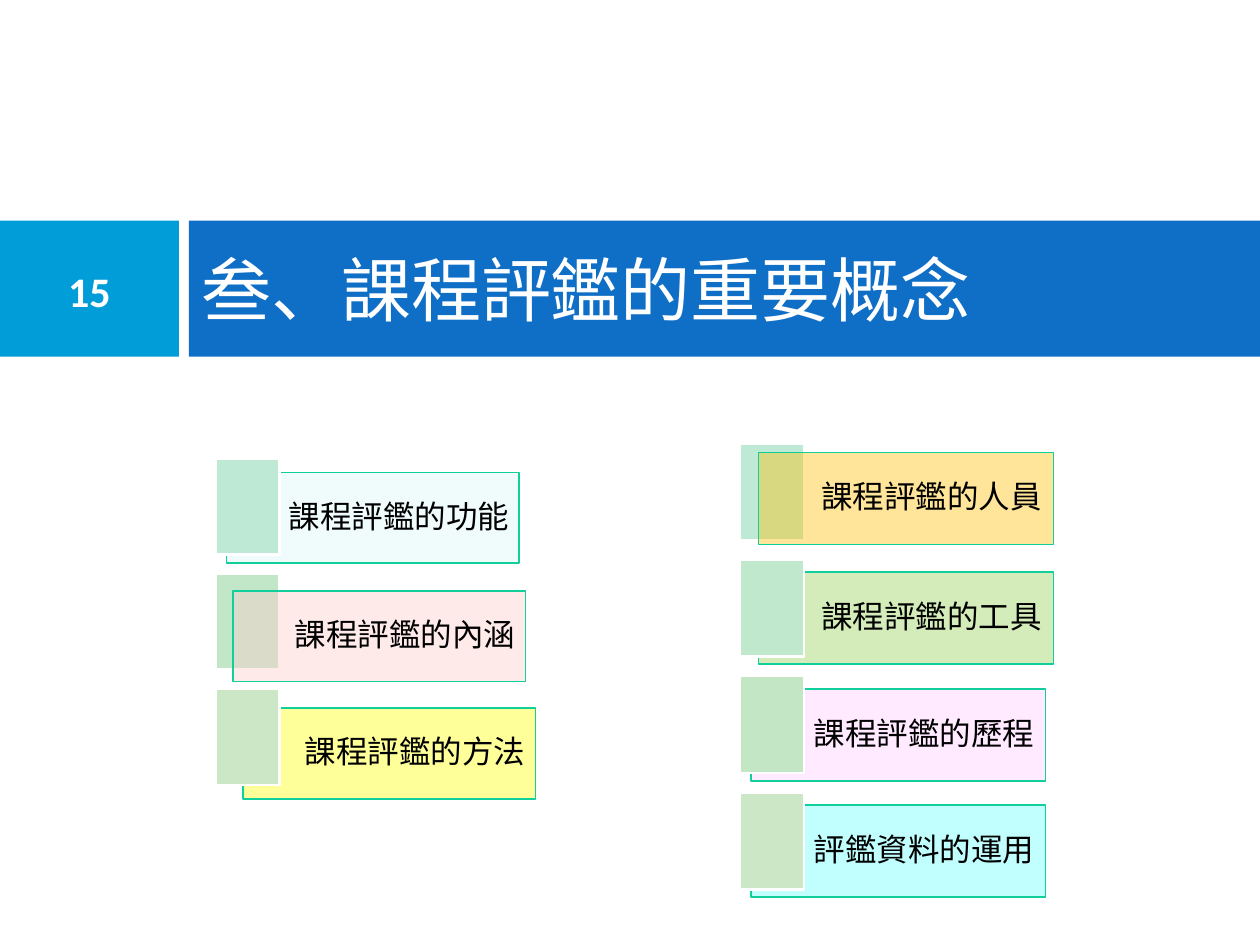
"""Build a section slide with a title band and two staggered lists of topics."""
from lxml import etree
from pptx import Presentation
from pptx import util as u
from pptx.dml.color import RGBColor
from pptx.enum import shapes, text
from pptx.oxml.ns import qn

THEME = {
    "font": "Calibri", "white": "FFFFFF", "ink": "000000",
    "number_band": "009DD9", "title_band": "0F6FC6", "card_line": "10CF9B",
    "title_size": 40, "number_size": 24, "card_size": 18,
    "card_line_width": 0.79, "tab_line_width": 1.5, "card_opacity": 40,
}

presentation = Presentation()
presentation.slide_width, presentation.slide_height = u.Inches(10), u.Inches(7.5)
slide = presentation.slides.add_slide(presentation.slide_layouts[6])
COLUMN = presentation.slide_width / 100
ROW = presentation.slide_height / 75


def add_box(left, top, width, height, fill, line=None, line_width=0, opacity=100):
    shape = slide.shapes.add_shape(
        shapes.MSO_SHAPE.RECTANGLE, round(left * COLUMN), round(top * ROW),
        round(width * COLUMN), round(height * ROW))
    shape.shadow.inherit = False
    shape.fill.solid()
    shape.fill.fore_color.rgb = RGBColor.from_string(fill)
    if opacity < 100:
        color = shape.fill._xPr.find(qn("a:solidFill"))[0]
        etree.SubElement(color, qn("a:alpha"), val=str(opacity * 1000))
    if line:
        shape.line.color.rgb = RGBColor.from_string(line)
        shape.line.width = u.Pt(line_width)
    else:
        shape.line.fill.background()
    return shape


def write(shape, words, size, color, align=text.PP_ALIGN.LEFT, bold=False,
          spacing=1.0, **margins):
    frame = shape.text_frame
    frame_format = {"word_wrap": True, "vertical_anchor": text.MSO_ANCHOR.MIDDLE}
    frame_format.update({f"margin_{side}": u.Inches(gap) for side, gap in margins.items()})
    for name, value in frame_format.items():
        setattr(frame, name, value)
    paragraph = frame.paragraphs[0]
    paragraph.alignment, paragraph.line_spacing = align, spacing
    run = paragraph.add_run()
    run.text = words
    for name, value in {"name": THEME["font"], "size": u.Pt(size), "bold": bold}.items():
        setattr(run.font, name, value)
    run.font.color.rgb = RGBColor.from_string(color)


add_box(0, 17.5, 14.2, 10.8, THEME["number_band"])
title_band = add_box(15, 17.5, 85, 10.8, THEME["title_band"])
write(title_band, "叁、課程評鑑的重要概念", THEME["title_size"], THEME["white"])

lists = [
    {"tab_left": 17.1, "tab_top": 36.4, "pitch": 9.15, "tab_height": 7.6,
     "card_width": 23.2, "card_height": 7.2, "indent": 0.49,
     "tabs": ["BDE9D5", "C2E7C8", "CCE7C6"],
     "cards": [("課程評鑑的功能", 18, 37.5, "DBF5F9"),
               ("課程評鑑的方法", 19.3, 56.2, "FFFF00"),
               ("課程評鑑的內涵", 18.5, 46.9, "FFCCCC")]},
    {"tab_left": 58.7, "tab_top": 35.2, "pitch": 9.23, "tab_height": 7.7,
     "card_width": 23.4, "card_height": 7.3, "indent": 0.5,
     "tabs": ["BDE9D5", "C0E8CC", "C3E7C5", "CCE7C6"],
     "cards": [("課程評鑑的工具", 60.2, 45.4, "92D050"),
               ("課程評鑑的人員", 60.2, 35.9, "FFC000"),
               ("課程評鑑的歷程", 59.6, 54.7, "FFCCFF"),
               ("評鑑資料的運用", 59.6, 63.9, "66FFFF")]},
]

for topics in lists:
    for index, (card, tab_fill) in enumerate(zip(topics["cards"], topics["tabs"])):
        words, left, top, fill = card
        card_box = add_box(left, top, topics["card_width"], topics["card_height"], fill,
                           THEME["card_line"], THEME["card_line_width"], THEME["card_opacity"])
        write(card_box, words, THEME["card_size"], THEME["ink"], spacing=0.9,
              left=topics["indent"], top=0.07, right=0.04, bottom=0.07)
        add_box(topics["tab_left"], topics["tab_top"] + index * topics["pitch"], 5.1,
                topics["tab_height"], tab_fill, THEME["white"], THEME["tab_line_width"])

number_box = slide.shapes.add_textbox(
    0, round(19.2 * ROW), round(14.2 * COLUMN), round(7.7 * ROW))
write(number_box, "15", THEME["number_size"], THEME["white"], text.PP_ALIGN.CENTER, bold=True)

presentation.save("out.pptx")
